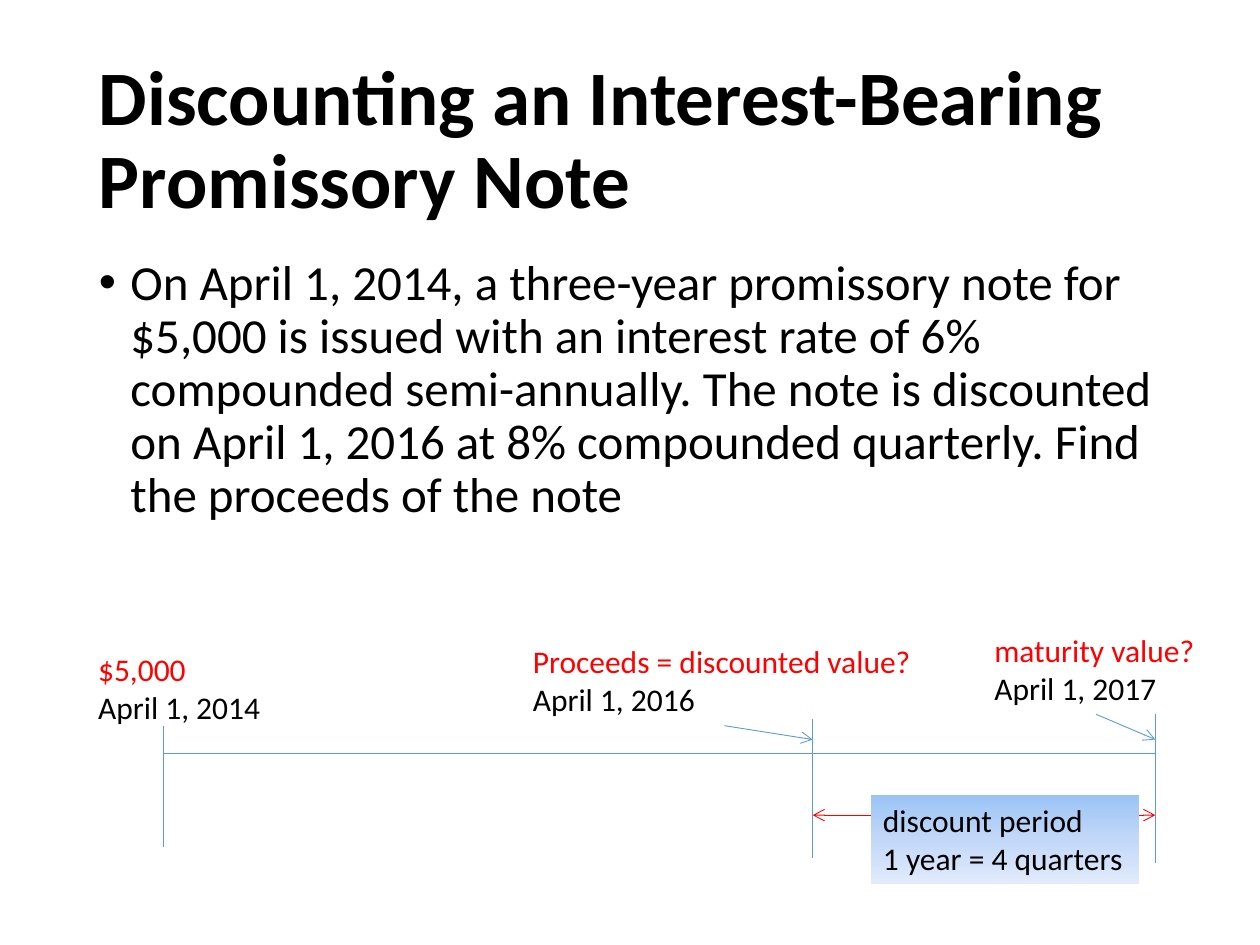
from copy import deepcopy

from pptx import Presentation
from pptx.dml.color import RGBColor
from pptx.enum.shapes import MSO_CONNECTOR, MSO_SHAPE
from pptx.enum.text import MSO_ANCHOR, MSO_AUTO_SIZE, PP_ALIGN
from pptx.oxml.ns import qn
from pptx.util import Pt

STRAIGHT = MSO_CONNECTOR.STRAIGHT
RECTANGLE = MSO_SHAPE.RECTANGLE
TOP, MIDDLE = MSO_ANCHOR.TOP, MSO_ANCHOR.MIDDLE
FIT_SHAPE, FIXED = MSO_AUTO_SIZE.SHAPE_TO_FIT_TEXT, MSO_AUTO_SIZE.NONE
LEFT = PP_ALIGN.LEFT

BLACK, RED, BLUE = "000000", "FF0000", "5B9BD5"


def color(code):
    return RGBColor.from_string(code)


def write(frame, text, size=18, colors=(BLACK,), bold=False, spacing=None,
          before=0, bullet=None, indent=18, anchor=TOP, wrap=False):
    """Fill a text frame, one paragraph a line; the last colour repeats."""
    frame.word_wrap = wrap
    frame.auto_size = FIXED if wrap else FIT_SHAPE
    frame.vertical_anchor = anchor
    for number, line in enumerate(text.split("\n")):
        para = frame.add_paragraph() if number else frame.paragraphs[0]
        para.alignment = LEFT
        para.space_before = Pt(before)
        if spacing:
            para.line_spacing = spacing
        if bullet:
            properties = para._p.get_or_add_pPr()
            properties.set("marL", str(Pt(indent)))
            properties.set("indent", str(-Pt(indent)))
            font = properties.makeelement(qn("a:buFont"), {"typeface": "Arial"})
            mark = properties.makeelement(qn("a:buChar"), {"char": bullet})
            properties.extend([font, mark])
        span = para.add_run()
        span.text = line
        span.font.name = "Calibri"
        span.font.size = Pt(size)
        span.font.bold = bold
        span.font.color.rgb = color(colors[min(number, len(colors) - 1)])


class Page:
    """The current slide and its style."""
    line_width = 0.5

    def __init__(self, deck):
        self.shapes = deck.slides.add_slide(deck.slide_layouts[6]).shapes

    def text(self, left, top, width, height, text, **style):
        box = self.shapes.add_textbox(Pt(left), Pt(top), Pt(width), Pt(height))
        write(box.text_frame, text, **style)

    def line(self, x1, y1, x2, y2, stroke=BLUE, ends=()):
        line = self.shapes.add_connector(STRAIGHT, Pt(x1), Pt(y1), Pt(x2), Pt(y2))
        line.line.color.rgb = color(stroke)
        line.line.width = Pt(self.line_width)
        outline = line.line._get_or_add_ln()
        for end in ends:
            outline.append(outline.makeelement(qn("a:" + end), {"type": "arrow"}))
        properties = line._element.spPr
        properties.append(properties.makeelement(qn("a:effectLst"), {}))

    def gradient_box(self, left, top, width, height, text, start, middle, end):
        box = self.shapes.add_shape(RECTANGLE, Pt(left), Pt(top), Pt(width), Pt(height))
        box.shadow.inherit = False
        box.line.fill.background()
        box.fill.gradient()
        box.fill.gradient_angle = 270
        first = box._element.spPr.find(".//" + qn("a:gs"))
        first.addnext(deepcopy(first))
        stops = zip(box.fill.gradient_stops, (0, 0.5, 1), (start, middle, end))
        for stop, position, code in stops:
            stop.position = position
            stop.color.rgb = color(code)
        write(box.text_frame, text)


def main():
    deck = Presentation()
    deck.slide_width, deck.slide_height = Pt(720), Pt(540)
    page = Page(deck)

    # Title and problem statement
    page.text(49.5, 28.75, 621, 104.4, "Discounting an Interest-Bearing Promissory Note",
              size=44, bold=True, spacing=0.9, anchor=MIDDLE, wrap=True)
    page.text(49.5, 144, 621, 342.7,
              "On April 1, 2014, a three-year promissory note for $5,000 is issued "
              "with an interest rate of 6% compounded semi-annually. The note is "
              "discounted on April 1, 2016 at 8% compounded quarterly. Find the "
              "proceeds of the note",
              size=28, spacing=0.9, before=10, bullet="•", wrap=True)

    # Time axis with its three dates
    issue, discount, maturity = 93.6, 464.4, 660.2
    axis, arrow_tip, period = 430.5, 422.6, 465.8
    page.line(issue, axis, maturity, axis)
    for x, top, bottom in ((issue, 414.7, 483.8), (maturity, 408.2, 493.2),
                           (discount, 411.1, 490.3)):
        page.line(x, top, x, bottom)

    # Discount period
    page.line(discount, period, maturity, period, RED, ends=("headEnd", "tailEnd"))
    page.gradient_box(497.5, 454.3, 153.4, 50.9, "discount period\n1 year = 4 quarters",
                      "9AC3F5", "C2D8F8", "E1EBFB")

    # Amounts over the dates
    for left, top, width, text in (
            (297.4, 363.6, 233.3, "Proceeds = discounted value?\nApril 1, 2016"),
            (49, 368.2, 108, "$5,000\nApril 1, 2014"),
            (561.1, 357.1, 130.3, "maturity value?\nApril 1, 2017")):
        page.text(left, top, width, 50.9, text, colors=(RED, BLACK))

    # Pointers from the amounts to the axis
    for x, y, target in ((626.4, 408.2, maturity), (414, 414.7, discount)):
        page.line(x, y, target, arrow_tip, ends=("tailEnd",))

    deck.save("out.pptx")


if __name__ == "__main__":
    main()
